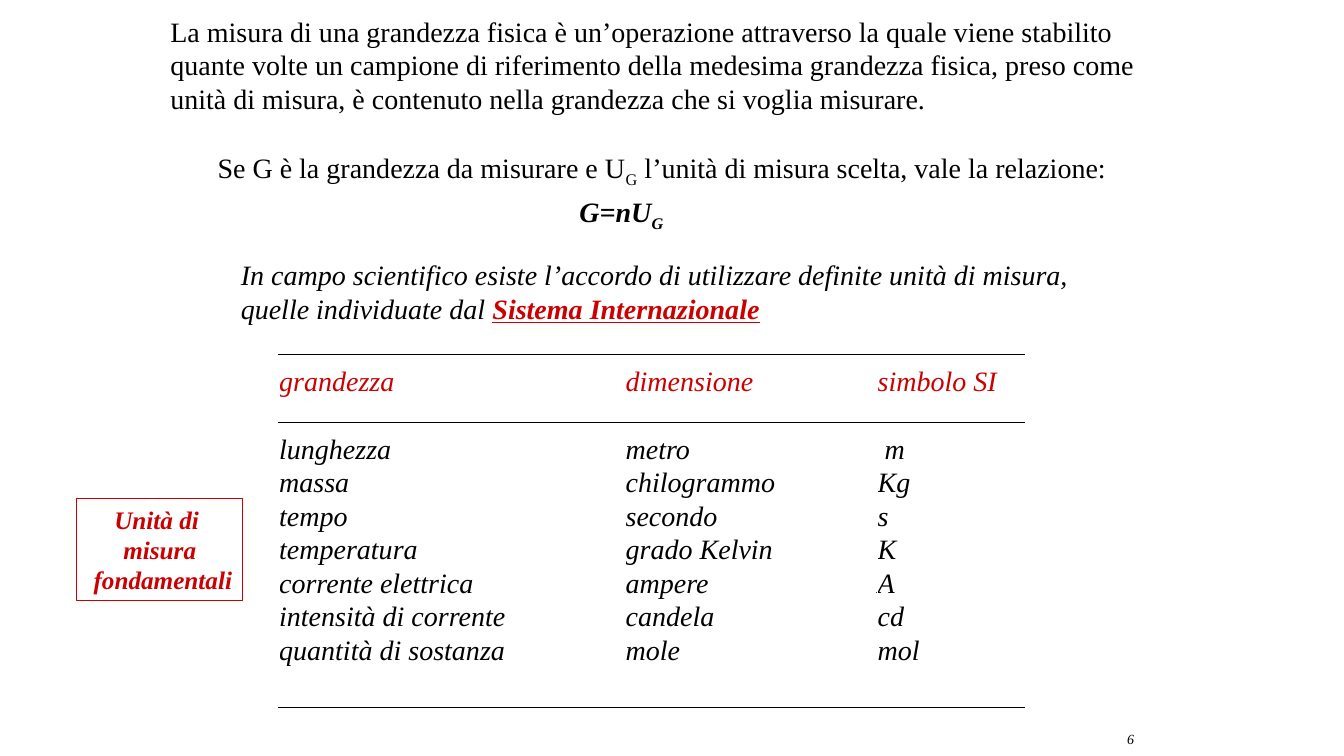
from dataclasses import dataclass

from lxml.etree import SubElement
from pptx import Presentation
from pptx.dml.color import RGBColor
from pptx.enum.shapes import MSO_CONNECTOR, MSO_SHAPE
from pptx.enum.text import MSO_ANCHOR, MSO_AUTO_SIZE, PP_ALIGN
from pptx.oxml.ns import qn
from pptx.util import Pt


@dataclass(frozen=True)
class Theme:
    family: str = "Times New Roman"
    ink: RGBColor = RGBColor(0x00, 0x00, 0x00)
    accent: RGBColor = RGBColor(0xCC, 0x00, 0x00)
    body: int = 20
    label: int = 18
    footer: int = 10
    rule: float = 0.75


PLAIN = {"bold": False, "italic": False}
ITALIC = {"bold": False, "italic": True}
STRONG = {"bold": True, "italic": True}
FRAME = {"word_wrap": True, "auto_size": MSO_AUTO_SIZE.NONE,
         "vertical_anchor": MSO_ANCHOR.TOP}
FLUSH = {"margin_left": 0, "margin_right": 0, "margin_top": 0, "margin_bottom": 0}


def assign(target, values):
    for name, value in values.items():
        setattr(target, name, value)


class SlideBuilder:
    def __init__(self, slide, theme):
        self.slide = slide
        self.theme = theme

    def add_runs(self, paragraph, pieces, size=None, color=None, align=PP_ALIGN.LEFT):
        paragraph.alignment = align
        for text, style, *baseline in pieces:
            run = paragraph.add_run()
            run.text = text
            assign(run.font, {"name": self.theme.family,
                              "size": Pt(size or self.theme.body), **style})
            run.font.color.rgb = color or self.theme.ink
            if baseline:
                run._r.get_or_add_rPr().set("baseline", str(baseline[0] * 1000))
        return paragraph

    def title(self, box, pieces):
        heading = self.slide.shapes.title
        assign(heading, dict(zip(("left", "top", "width", "height"), map(Pt, box))))
        assign(heading.text_frame, FRAME)
        self.add_runs(heading.text_frame.paragraphs[0], pieces)

    def text(self, box, pieces, frame=None, **look):
        holder = self.slide.shapes.add_textbox(*map(Pt, box))
        assign(holder.text_frame, {**FRAME, **(frame or {})})
        return self.add_runs(holder.text_frame.paragraphs[0], pieces, **look)

    def label(self, box, lines):
        panel = self.slide.shapes.add_shape(MSO_SHAPE.RECTANGLE, *map(Pt, box))
        panel.shadow.inherit = False
        panel.fill.background()
        panel.line.color.rgb = self.theme.accent
        panel.line.width = Pt(self.theme.rule)
        frame = panel.text_frame
        assign(frame, {**FRAME, "word_wrap": False})
        for index, line in enumerate(lines):
            paragraph = frame.add_paragraph() if index else frame.paragraphs[0]
            self.add_runs(paragraph, [(line, STRONG)], self.theme.label,
                          self.theme.accent, PP_ALIGN.CENTER)

    def rule(self, left, right, y):
        line = self.slide.shapes.add_connector(
            MSO_CONNECTOR.STRAIGHT, Pt(left), Pt(y), Pt(right), Pt(y))
        line.line.color.rgb = self.theme.ink
        line.line.width = Pt(self.theme.rule)
        SubElement(line._element.spPr, qn("a:effectLst"))

    def table(self, left, top, widths, header_height, row_height, rows):
        heights = [header_height] + [row_height] * (len(rows) - 1)
        grid = self.slide.shapes.add_table(
            len(rows), len(widths), Pt(left), Pt(top),
            Pt(sum(widths)), Pt(sum(heights))).table
        assign(grid, {"first_row": False, "horz_banding": False})
        for column, width in zip(grid.columns, widths):
            column.width = Pt(width)
        for index, (row, height, values) in enumerate(zip(grid.rows, heights, rows)):
            row.height = Pt(height)
            color = self.theme.ink if index else self.theme.accent
            for cell, value in zip(row.cells, values):
                cell.fill.background()
                assign(cell, {**FLUSH, "vertical_anchor": MSO_ANCHOR.TOP})
                self.add_runs(cell.text_frame.paragraphs[0], [(value, ITALIC)],
                              color=color)


UNITS = [
    ("grandezza", "dimensione", "simbolo SI"),
    ("lunghezza", "metro", " m"),
    ("massa", "chilogrammo", "Kg"),
    ("tempo", "secondo", "s"),
    ("temperatura", "grado Kelvin", "K"),
    ("corrente elettrica", "ampere", "A"),
    ("intensità di corrente", "candela", "cd"),
    ("quantità di sostanza", "mole", "mol"),
]


def main():
    deck = Presentation()
    assign(deck, {"slide_width": Pt(960), "slide_height": Pt(540)})
    theme = Theme()
    builder = SlideBuilder(deck.slides.add_slide(deck.slide_layouts[5]), theme)

    builder.title((114.5, 6.5, 720, 80), [(
        "La misura di una grandezza fisica è un’operazione attraverso la quale viene "
        "stabilito quante volte un campione di riferimento della medesima grandezza "
        "fisica, preso come unità di misura, è contenuto nella grandezza che si voglia "
        "misurare.", PLAIN)])
    builder.text((148.3, 103.7, 652, 32), [
        ("Se G è la grandezza da misurare e U", PLAIN),
        ("G", PLAIN, -25),
        (" l’unità di misura scelta, vale la relazione:", PLAIN)])
    builder.text((406.8, 135.4, 106.6, 32), [("G=nU", STRONG), ("G", STRONG, -25)])

    agreement = builder.text((164.9, 180.7, 641.5, 55.4), [(
        "In campo scientifico esiste l’accordo di utilizzare definite unità di misura, "
        "quelle individuate dal ", ITALIC)])
    builder.add_runs(agreement,
                     [("Sistema Internazionale", {**STRONG, "underline": True})],
                     color=theme.accent)

    builder.table(199.4, 262, (247.5, 180, 105), 48, 24, UNITS)
    for y in (253.4, 301.7, 505.4):
        builder.rule(198.7, 732.2, y)
    builder.label((54.7, 356.4, 118.8, 72.7), ("Unità di ", "misura", " fondamentali"))
    builder.text((744.5, 515.5, 72.7, 24.5), [("6", ITALIC)],
                 {"vertical_anchor": MSO_ANCHOR.MIDDLE},
                 size=theme.footer, align=PP_ALIGN.RIGHT)
    deck.save("out.pptx")


if __name__ == "__main__":
    main()
